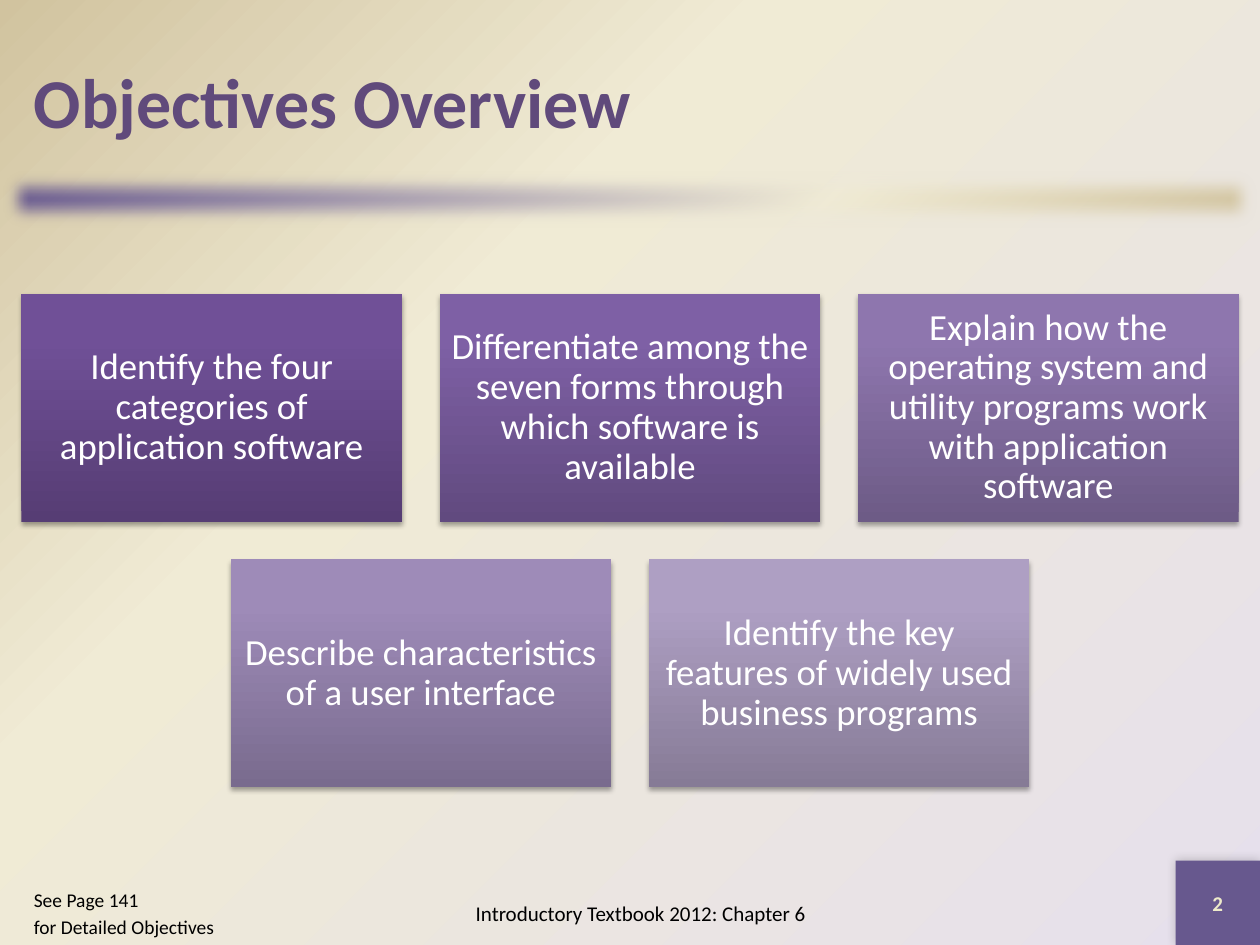
from dataclasses import dataclass

from lxml import etree
from pptx import Presentation
from pptx.dml.color import RGBColor
from pptx.enum.shapes import MSO_SHAPE
from pptx.enum.text import MSO_ANCHOR, PP_ALIGN
from pptx.oxml import parse_xml
from pptx.oxml.ns import nsdecls, qn
from pptx.util import Inches, Length, Pt


@dataclass(frozen=True)
class Theme:
    font: str = "Calibri"
    title: str = "604A7B"
    accent: str = "67588E"
    cream: str = "F0EBD5"
    tan: str = "D1C39F"
    lilac: str = "E6E0EC"
    page_number: str = "EEEBCA"
    white: str = "FFFFFF"
    black: str = "000000"
    title_size: float = 40
    card_size: float = 21
    footer_size: float = 12
    note_size: float = 11.1


@dataclass(frozen=True)
class Box:
    left: float
    top: float
    width: float
    height: float

    def lengths(self) -> tuple[Length, ...]:
        return tuple(Inches(v) for v in (self.left, self.top, self.width, self.height))


@dataclass(frozen=True)
class TextStyle:
    size: float
    color: str
    bold: bool = False
    align: PP_ALIGN = PP_ALIGN.LEFT
    anchor: MSO_ANCHOR = MSO_ANCHOR.MIDDLE
    line_spacing: float = 1.0
    space_before: float = 0


@dataclass(frozen=True)
class Shadow:
    opacity: int
    blur: float
    distance: float
    angle: int


@dataclass(frozen=True)
class Objective:
    text: str
    bottom: str
    middle: str
    top: str


THEME = Theme()
LINEAR = '<a:lin ang="{}" scaled="0"/>'
FROM_CORNER = '<a:path path="circle"><a:fillToRect l="100000" t="100000"/></a:path>'

CARD_WIDTH, CARD_HEIGHT, CARD_GAP = 3.02, 1.81, 0.3
CARDS_TOP, CARDS_CENTER = 2.33, 5.0
CARD_SHADOW = Shadow(35, 3.1, 1.8, 90)
CARD_TEXT = TextStyle(THEME.card_size, THEME.white, align=PP_ALIGN.CENTER, line_spacing=0.9)

OBJECTIVE_ROWS = [
    [
        Objective("Identify the four categories of application software",
                  "563D74", "705097", "704F99"),
        Objective("Differentiate among the seven forms through which software is available",
                  "614A7F", "7E60A5", "7F60A7"),
        Objective("Explain how the operating system and utility programs work "
                  "with application software", "6D5B86", "8E76AE", "8E75B0"),
    ],
    [
        Objective("Describe characteristics of a user interface",
                  "796B8E", "9E8BB8", "9E8BBA"),
        Objective("Identify the key features of widely used business programs",
                  "867B96", "AE9FC3", "AE9FC4"),
    ],
]


def set_gradient(owner, element, stops: list[tuple[int, str]], direction: str) -> None:
    """Fill a shape or background with a gradient, given its XML element."""
    owner.fill.solid()
    solid = element.xpath(".//a:solidFill")[0]
    stop_xml = "".join(
        f'<a:gs pos="{pos * 1000}"><a:srgbClr val="{color}"/></a:gs>' for pos, color in stops
    )
    gradient = parse_xml(
        f'<a:gradFill {nsdecls("a")} rotWithShape="1">'
        f"<a:gsLst>{stop_xml}</a:gsLst>{direction}</a:gradFill>"
    )
    solid.getparent().replace(solid, gradient)


def add_rectangle(slide, box: Box):
    rectangle = slide.shapes.add_shape(MSO_SHAPE.RECTANGLE, *box.lengths())
    rectangle.line.fill.background()
    rectangle.shadow.inherit = False
    return rectangle


def effect_list(shape):
    return shape.element.spPr.find(qn("a:effectLst"))


def add_shadow(shape, shadow: Shadow) -> None:
    outer = etree.SubElement(
        effect_list(shape), qn("a:outerShdw"), blurRad=str(Pt(shadow.blur)),
        dist=str(Pt(shadow.distance)), dir=str(shadow.angle * 60000), rotWithShape="0",
    )
    color = etree.SubElement(outer, qn("a:srgbClr"), val=THEME.black)
    etree.SubElement(color, qn("a:alpha"), val=str(shadow.opacity * 1000))


def write_text(shape, lines: list[str], style: TextStyle) -> None:
    frame = shape.text_frame
    frame.word_wrap = True
    frame.vertical_anchor = style.anchor
    for index, line in enumerate(lines):
        paragraph = frame.add_paragraph() if index else frame.paragraphs[0]
        paragraph.alignment = style.align
        paragraph.line_spacing = style.line_spacing
        paragraph.space_before = Pt(style.space_before)
        run = paragraph.add_run()
        run.text = line
        run.font.name = THEME.font
        run.font.size = Pt(style.size)
        run.font.bold = style.bold
        run.font.color.rgb = RGBColor.from_string(style.color)


def add_text(slide, box: Box, lines: list[str], style: TextStyle) -> None:
    write_text(slide.shapes.add_textbox(*box.lengths()), lines, style)


def add_card(slide, box: Box, objective: Objective) -> None:
    card = add_rectangle(slide, box)
    stops = [(0, objective.bottom), (80, objective.middle), (100, objective.top)]
    set_gradient(card, card.element, stops, LINEAR.format(270 * 60000))
    add_shadow(card, CARD_SHADOW)
    frame = card.text_frame
    frame.margin_left = frame.margin_right = Inches(0.09)
    frame.margin_top = frame.margin_bottom = Inches(0.09)
    write_text(card, [objective.text], CARD_TEXT)


def main() -> None:
    presentation = Presentation()
    presentation.slide_width, presentation.slide_height = Inches(10), Inches(7.5)
    slide = presentation.slides.add_slide(presentation.slide_layouts[6])

    # Background
    set_gradient(slide.background, slide.element,
                 [(0, THEME.lilac), (65, THEME.cream), (100, THEME.tan)], FROM_CORNER)

    # Soft-edged divider under the title
    divider = add_rectangle(slide, Box(0, 1.33, 10, 0.5))
    set_gradient(divider, divider.element,
                 [(0, THEME.accent), (65, THEME.cream), (100, THEME.tan)],
                 LINEAR.format(45 * 60000))
    etree.SubElement(effect_list(divider), qn("a:softEdge"), rad=str(Pt(10)))

    # Title
    add_text(slide, Box(0.17, 0.17, 9.67, 1.25), ["Objectives Overview"],
             TextStyle(THEME.title_size, THEME.title, bold=True))

    # Objective cards, each row centred
    for row, objectives in enumerate(OBJECTIVE_ROWS):
        count = len(objectives)
        row_width = count * CARD_WIDTH + (count - 1) * CARD_GAP
        top = CARDS_TOP + row * (CARD_HEIGHT + CARD_GAP)
        for column, objective in enumerate(objectives):
            left = CARDS_CENTER - row_width / 2 + column * (CARD_WIDTH + CARD_GAP)
            add_card(slide, Box(left, top, CARD_WIDTH, CARD_HEIGHT), objective)

    # Footer, page number and page reference
    add_text(slide, Box(3, 7, 4.17, 0.5), ["Introductory Textbook 2012: Chapter 6"],
             TextStyle(THEME.footer_size, THEME.black, align=PP_ALIGN.CENTER))
    page_number = add_rectangle(slide, Box(9.33, 6.83, 0.67, 0.67))
    page_number.fill.solid()
    page_number.fill.fore_color.rgb = RGBColor.from_string(THEME.accent)
    add_shadow(page_number, Shadow(20, 6, 0, 225))
    write_text(page_number, ["2"], TextStyle(THEME.footer_size, THEME.page_number, bold=True,
                                             align=PP_ALIGN.CENTER))
    add_text(slide, Box(0.17, 7, 1.83, 0.5), ["See Page 141", "for Detailed Objectives"],
             TextStyle(THEME.note_size, THEME.black, anchor=MSO_ANCHOR.TOP, space_before=2.2))

    presentation.save("out.pptx")


if __name__ == "__main__":
    main()
